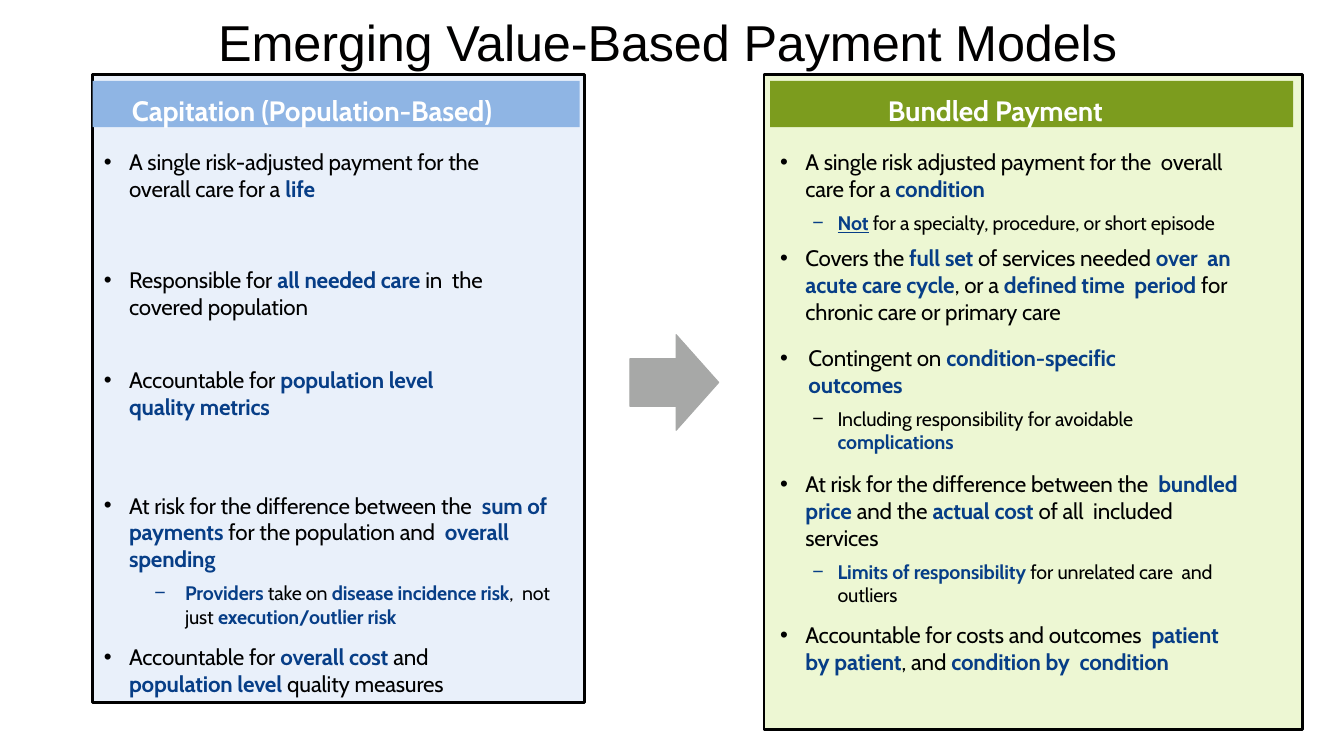
from lxml.etree import SubElement
from pptx import Presentation
from pptx.dml.color import RGBColor
from pptx.enum.shapes import MSO_SHAPE as Preset
from pptx.enum.text import MSO_ANCHOR as Anchor, MSO_AUTO_SIZE as AutoSize, PP_ALIGN as Align
from pptx.oxml.ns import qn
from pptx.util import Pt

COLORS = {
    "black": "000000", "white": "FFFFFF", "emphasis": "073E87", "title": "010000",
    "capitation": "E9F0FA", "capitation header": "8FB5E4",
    "bundle": "EDF7D3", "bundle header": "7C9C1E", "arrow": "A7A8A7",
}
BODY_FONT = "Cabin"
HEADER_TOP, HEADER_HEIGHT, BODY_INSET = 4.5, 33, 52.7

# Each item: level, space before, right margin, text; *...* marks emphasis
CAPITATION = [
    (0, 0, 53, "A single risk-adjusted payment for the overall care for a *life*"),
    (0, 45.7, 46, "Responsible for *all needed care* in  the covered population"),
    (0, 33.4, 81, "Accountable for *population level quality metrics*"),
    (0, 51, 10, "At risk for the difference between the  *sum of payments* for the "
                "population and  *overall spending*"),
    (1, 6.3, 11, "*Providers* take on *disease incidence risk*,  not just "
                 "*execution/outlier risk*"),
    (0, 10.8, 74, "Accountable for *overall cost* and *population level* quality measures"),
]
BUNDLE = [
    (0, 0, 38, "A single risk adjusted payment for the  overall care for a *condition*"),
    (1, 6.3, 38, "*Not* for a specialty, procedure, or short episode"),
    (0, 6.9, 28, "Covers the *full set* of services needed *over  an acute care cycle*, "
                 "or a *defined time  period* for chronic care or primary care"),
    (2, 14, 97, "Contingent on *condition-specific outcomes*"),
    (1, 6.3, 80, "Including responsibility for avoidable *complications*"),
    (0, 11.7, 38, "At risk for the difference between the  *bundled price* and the "
                  "*actual cost* of all  included services"),
    (1, 6.3, 44, "*Limits of responsibility* for unrelated care  and outliers"),
    (0, 10.4, 46, "Accountable for costs and outcomes  *patient by patient*, and "
                  "*condition by  condition*"),
]
# Text size, left margin, hanging indent and bullet by level
CAPITATION_LEVELS = [(16, 26, 18, "•"), (14, 66, 22, "−")]
BUNDLE_LEVELS = [(16, 29.5, 18, "•"), (14, 52.5, 18, "−"), (16, 31.7, 20.2, "•")]


def rgb(name):
    return RGBColor.from_string(COLORS[name])


def set_font(font, size, color, name=BODY_FONT, bold=False):
    font.size, font.name, font.bold = Pt(size), name, bold
    font.color.rgb = rgb(color)


def add_run(paragraph, text):
    run = paragraph.add_run()
    run.text = text
    run._r.get_or_add_rPr().set("spc", "-10")
    return run


def set_frame(frame, left=0, top=0):
    frame.margin_left, frame.margin_top = Pt(left), Pt(top)
    frame.margin_right = frame.margin_bottom = 0
    frame.vertical_anchor, frame.word_wrap = Anchor.TOP, True
    frame.auto_size = AutoSize.NONE


def add_filled(slide, preset, box, fill, line=None, width=0):
    shape = slide.shapes.add_shape(preset, *map(Pt, box))
    shape.shadow.inherit = False
    shape.fill.solid()
    shape.fill.fore_color.rgb = rgb(fill)
    if line:
        shape.line.color.rgb = rgb(line)
        shape.line.width = Pt(width)
    else:
        shape.line.fill.background()
    return shape


def set_bullet(paragraph, left, hanging, right, character):
    properties = paragraph._p.get_or_add_pPr()
    for key, value in (("marL", left), ("marR", right), ("indent", -hanging)):
        properties.set(key, str(int(Pt(value))))
    SubElement(properties, qn("a:buFont")).set("typeface", "Arial")
    SubElement(properties, qn("a:buChar")).set("char", character)


def add_item(paragraph, item, levels):
    level, before, right, text = item
    size, left, hanging, bullet = levels[level]
    paragraph.alignment = Align.LEFT
    paragraph.space_before = Pt(before)
    set_font(paragraph.font, size, "black")
    set_bullet(paragraph, left, hanging, right, bullet)
    for number, part in enumerate(text.split("*")):
        if part:
            run = add_run(paragraph, part)
            emphasized = number % 2 == 1
            set_font(run.font, size, "emphasis" if emphasized else "black", bold=emphasized)
            run.font.underline = part == "Not"


def add_panel(slide, box, style, items, levels, heading, header_box, heading_left):
    left, top, _, _ = box
    # Bordered panel with bullets
    panel = add_filled(slide, Preset.RECTANGLE, box, style, "black", 1.92)
    frame = panel.text_frame
    set_frame(frame, top=BODY_INSET)
    for number, item in enumerate(items):
        paragraph = frame.add_paragraph() if number else frame.paragraphs[0]
        add_item(paragraph, item, levels)
    # Header band
    offset, width = header_box
    band = (left + offset, top + HEADER_TOP, width, HEADER_HEIGHT)
    header = add_filled(slide, Preset.RECTANGLE, band, style + " header")
    set_frame(header.text_frame, heading_left, 9)
    paragraph = header.text_frame.paragraphs[0]
    paragraph.alignment = Align.LEFT
    set_font(paragraph.font, 20, "white", bold=True)
    add_run(paragraph, heading)


def add_title(slide, box):
    title = slide.shapes.title
    title.left, title.top, title.width, title.height = map(Pt, box)
    set_frame(title.text_frame, 1, 1)
    paragraph = title.text_frame.paragraphs[0]
    paragraph.alignment = Align.LEFT
    set_font(paragraph.font, 36, "title", "Arial")
    add_run(paragraph, "Emerging Value-Based Payment Models")


def add_arrow(slide, box):
    arrow = add_filled(slide, Preset.RIGHT_ARROW, box, "arrow", "arrow", 0.72)
    arrow.adjustments[0], arrow.adjustments[1] = 0.5, 0.48


def main():
    presentation = Presentation()
    presentation.slide_width, presentation.slide_height = Pt(960), Pt(540)
    slide = presentation.slides.add_slide(presentation.slide_layouts[5])
    add_title(slide, (154.8, 7.2, 649.4, 45.4))
    add_panel(slide, (66.2, 53.3, 351.4, 448.5), "capitation", CAPITATION,
              CAPITATION_LEVELS, "Capitation (Population-Based)", (0, 347.8), 28)
    add_panel(slide, (545.8, 53.3, 384.5, 468), "bundle", BUNDLE,
              BUNDLE_LEVELS, "Bundled Payment", (4.3, 373.7), 84.2)
    add_arrow(slide, (450, 239, 63.4, 68.4))
    presentation.save("out.pptx")


if __name__ == "__main__":
    main()
